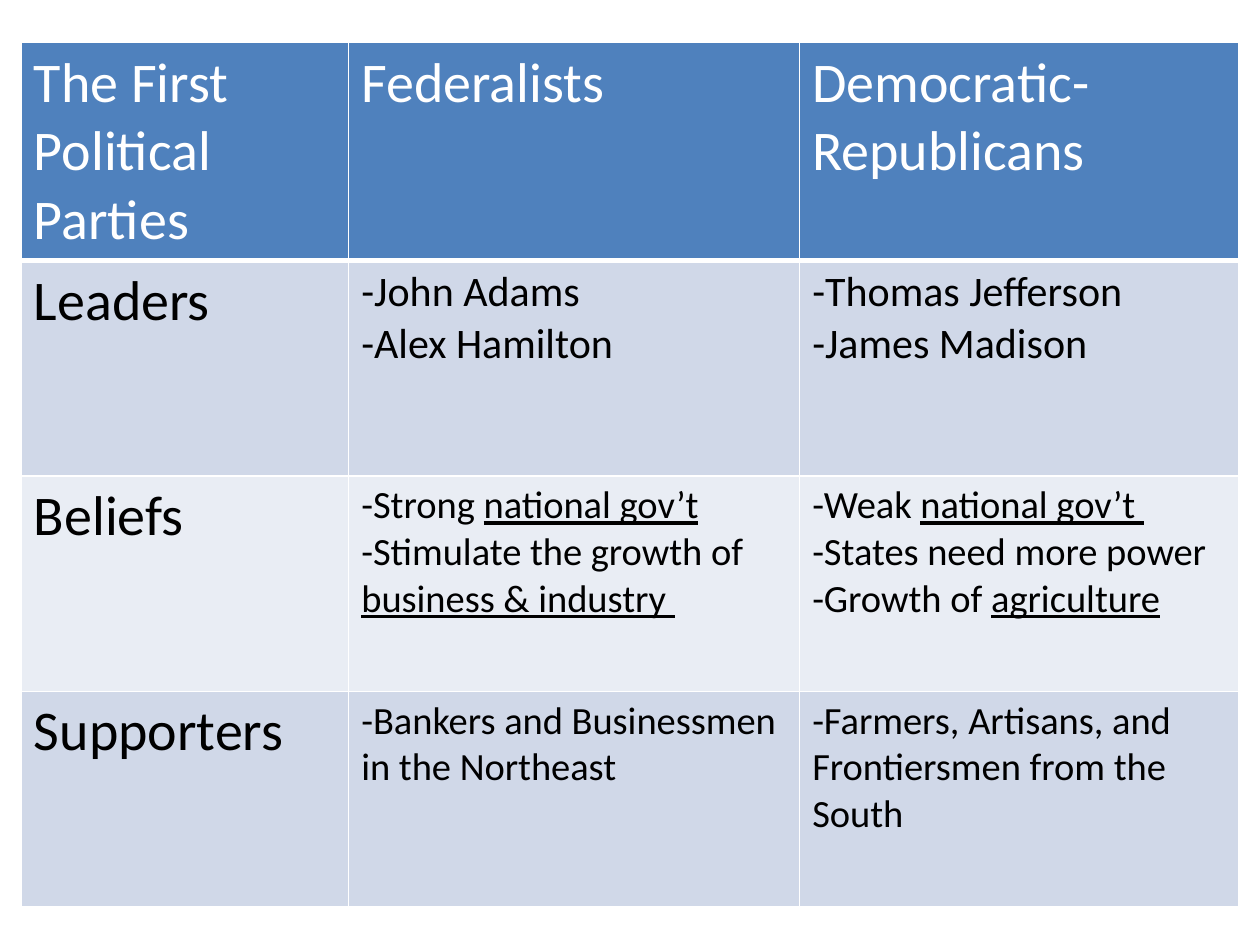
from dataclasses import dataclass

from lxml import etree
from pptx import Presentation
from pptx.dml.color import RGBColor
from pptx.oxml.ns import qn
from pptx.util import Cm, Pt


@dataclass(frozen=True)
class Theme:
    font: str = "Calibri"
    header: str = "4F81BD"
    band_dark: str = "D0D8E8"
    band_light: str = "E9EDF4"
    white: str = "FFFFFF"
    black: str = "000000"
    title: int = 32
    leaders: int = 24
    body: int = 22


T = Theme()


def add_run(p, text, size=T.body, color=T.black, underline=False):
    r = p.add_run()
    r.text = text
    r.font.name = T.font
    r.font.size = Pt(size)
    r.font.bold = False
    r.font.underline = underline
    r.font.color.rgb = RGBColor.from_string(color)


def set_border(cell, side, width, color=T.white):
    ln = etree.SubElement(cell._tc.get_or_add_tcPr(), qn(f"a:ln{side}"), w=str(Pt(width)))
    fill = etree.SubElement(ln, qn("a:solidFill"))
    etree.SubElement(fill, qn("a:srgbClr"), val=color)


# Rows of cells; a cell is a list of paragraphs, and "_" toggles underlining
ROWS = [
    [["The First Political Parties"], ["Federalists"], ["Democratic-Republicans"]],
    [["Leaders"],
     ["-John Adams", "-Alex Hamilton"],
     ["-Thomas Jefferson", "-James Madison"]],
    [["Beliefs"],
     ["-Strong _national gov’t", "-Stimulate the growth of _business & industry "],
     ["-Weak _national gov’t ", "-States need more power", "-Growth of _agriculture"]],
    [["Supporters"],
     ["-Bankers and Businessmen in the Northeast"],
     ["-Farmers, Artisans, and Frontiersmen from the South"]],
]
ROW_FILLS = [T.header, T.band_dark, T.band_light, T.band_dark]
ROW_SIZES = [T.title, T.leaders, T.body, T.body]
COL_WIDTHS = [6.6, 9.09, 8.86]
ROW_HEIGHT = 4.34

# Slide
prs = Presentation()
prs.slide_width, prs.slide_height = Cm(25.4), Cm(19.05)
s = prs.slides.add_slide(prs.slide_layouts[6])

# Table grid
table = s.shapes.add_table(
    len(ROWS), len(COL_WIDTHS), Cm(0.43), Cm(0.86),
    Cm(sum(COL_WIDTHS)), Cm(ROW_HEIGHT * len(ROWS))).table
for col, width in zip(table.columns, COL_WIDTHS):
    col.width = Cm(width)
for row in table.rows:
    row.height = Cm(ROW_HEIGHT)

# Cells: borders, fill, then text
for i, row in enumerate(ROWS):
    for j, paragraphs in enumerate(row):
        cell = table.cell(i, j)
        for side in "LRTB":
            set_border(cell, side, 3 if i == 0 and side == "B" else 1)
        cell.fill.solid()
        cell.fill.fore_color.rgb = RGBColor.from_string(ROW_FILLS[i])

        tf = cell.text_frame
        size = T.title if j == 0 else ROW_SIZES[i]
        color = T.white if i == 0 else T.black
        for n, text in enumerate(paragraphs):
            p = tf.add_paragraph() if n else tf.paragraphs[0]
            for k, part in enumerate(text.split("_")):
                add_run(p, part, size=size, color=color, underline=k % 2 == 1)

prs.save("out.pptx")
